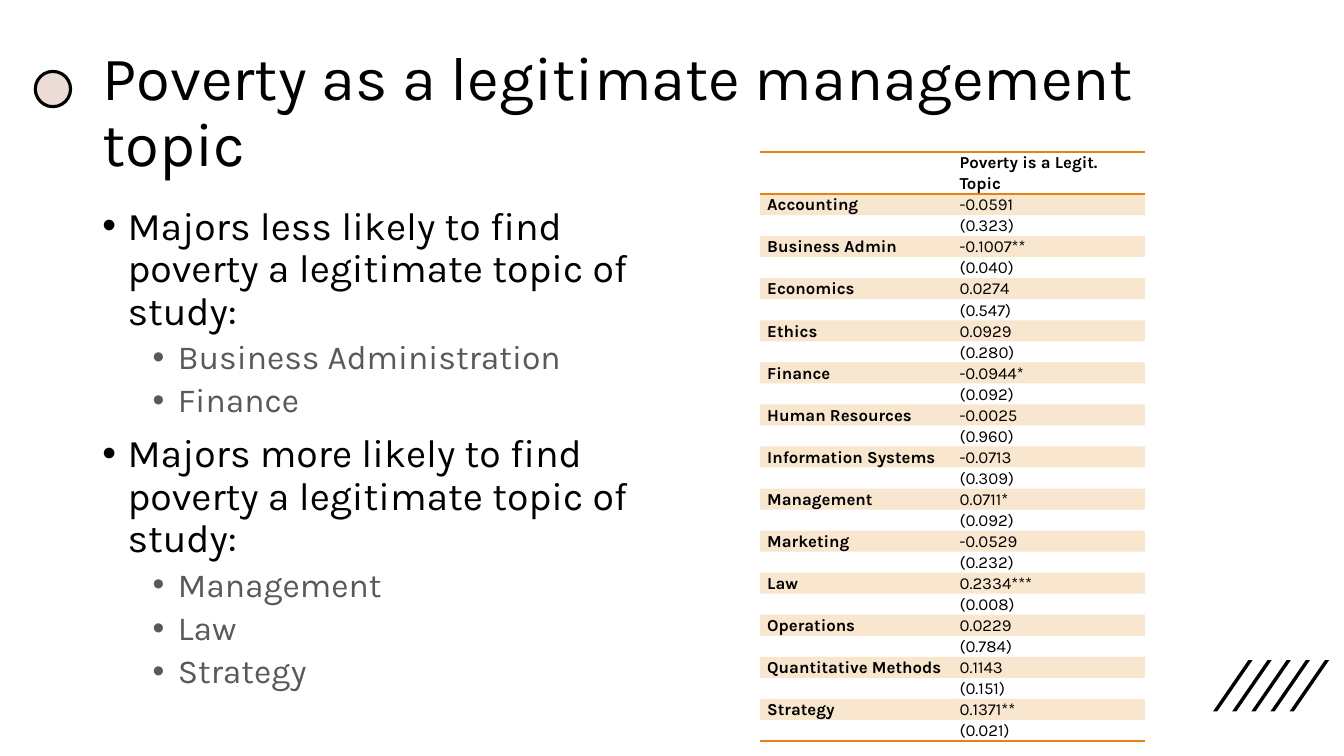
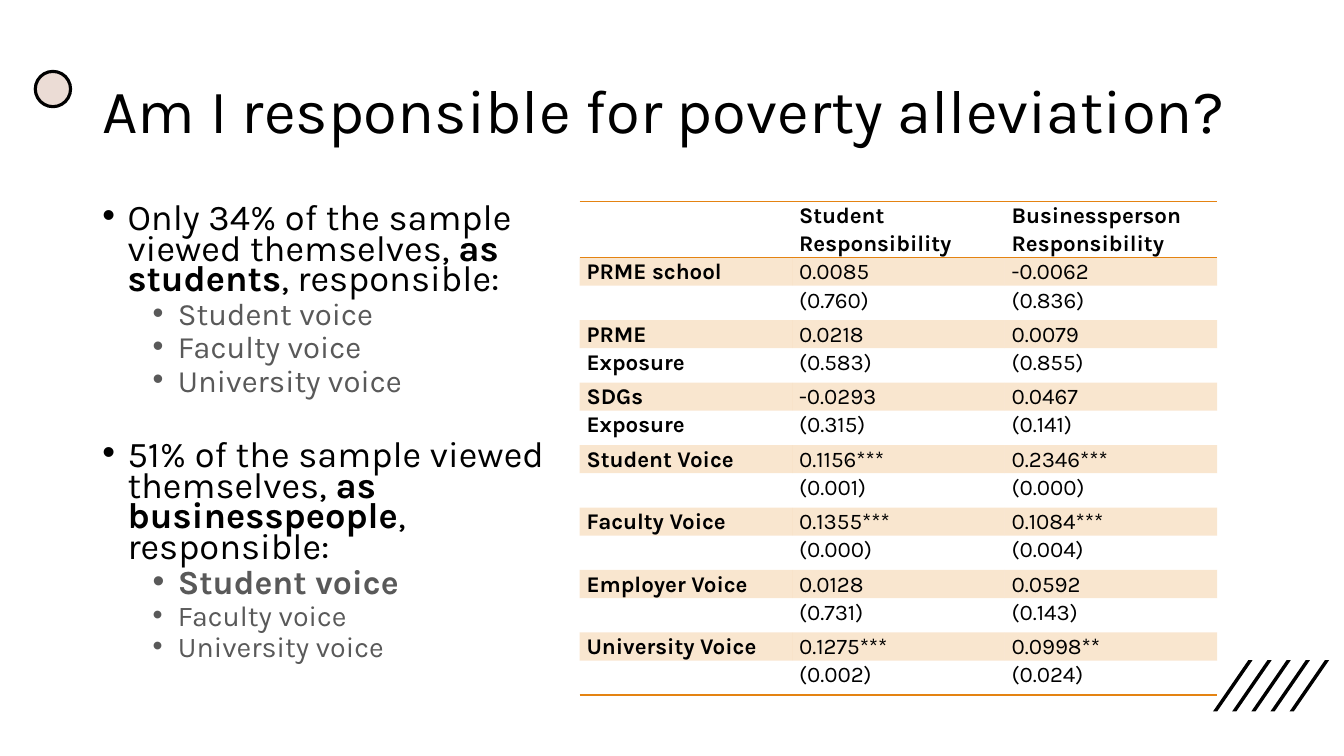
"""Build two slides on student attitudes to poverty, each with bullets and a regression table."""
from dataclasses import dataclass
from itertools import chain

from lxml.etree import SubElement
from pptx import Presentation
from pptx.dml.color import RGBColor
from pptx.enum.shapes import MSO_SHAPE
from pptx.enum.text import MSO_ANCHOR, MSO_AUTO_SIZE, PP_ALIGN
from pptx.oxml.ns import qn
from pptx.presentation import Presentation as PresentationType
from pptx.slide import Slide
from pptx.table import _Cell as Cell
from pptx.text.text import TextFrame, _Paragraph as Paragraph
from pptx.util import Emu, Inches, Pt

FONT = "Karla"
BLACK, GREY, ORANGE, BLUSH = "000000", "595959", "E48312", "EBDCD5"
SLIDE_WIDTH, SLIDE_HEIGHT = Emu(12192000), Emu(6858000)
GRID_COLUMNS = 160
TITLE_ONLY = 5
PLAIN_TABLE_STYLE = "{2D5ABB26-0587-4C30-8999-92F81FD0307C}"


@dataclass(frozen=True)
class Box:
    """A place on the grid of 160 columns by 90 rows."""
    left: float
    top: float
    width: float
    height: float

    def lengths(self) -> tuple[Emu, Emu, Emu, Emu]:
        """Return left, top, width and height as lengths."""
        return grid(self.left), grid(self.top), grid(self.width), grid(self.height)


@dataclass(frozen=True)
class Bullet:
    """One bullet, whose text has its bold part between asterisk pairs."""
    text: str
    size: float
    level: int = 0
    space_before: float = 10


@dataclass(frozen=True)
class Estimate:
    """A table variable with its coefficients and the p-values below them."""
    label: str
    coefficients: tuple[str, ...]
    p_values: tuple[str, ...]
    second_label: str = ""


@dataclass(frozen=True)
class TableStyle:
    """Place and measures of a table on the grid."""
    left: float
    top: float
    column_width: float
    header_height: float
    band_height: float
    plain_height: float
    text_size: float


@dataclass(frozen=True)
class Topic:
    """The content of one slide."""
    title: str
    bullet_box: Box
    bullets: tuple[Bullet, ...]
    line_spacing: float
    headings: tuple[str, ...]
    estimates: tuple[Estimate, ...]
    table_style: TableStyle


TITLE_BOX = Box(11, 4.8, 138, 17.4)
DOT_BOX = Box(4.2, 8.5, 4.2, 4.2)
STRIPE_BOX = Box(144.4, 78.6, 4.7, 6.1)
STRIPE_COUNT, STRIPE_STEP, STRIPE_THICKNESS = 5, 2.28, 0.5


def grid(cells: float) -> Emu:
    """Turn grid cells into a length."""
    return Emu(round(SLIDE_WIDTH * cells / GRID_COLUMNS))


def color(code: str) -> RGBColor:
    """Turn a hex string into a colour."""
    return RGBColor.from_string(code)


def add_text(paragraph: Paragraph, text: str, *, size: float, ink: str = BLACK, bold: bool = False) -> None:
    """Add a formatted run to a paragraph."""
    run = paragraph.add_run()
    run.text = text
    run.font.name = FONT
    run.font.size = Pt(size)
    run.font.bold = bold
    run.font.color.rgb = color(ink)


def add_stripes(slide: Slide) -> None:
    """Draw the slanted stripes in the lower right corner."""
    box = STRIPE_BOX
    bottom = box.top + box.height
    for index in range(STRIPE_COUNT):
        left = box.left + index * STRIPE_STEP
        right = left + box.width
        corners = [(left + STRIPE_THICKNESS, bottom), (left, bottom),
                   (right - STRIPE_THICKNESS, box.top), (right, box.top)]
        points = [(grid(x), grid(y)) for x, y in corners]
        builder = slide.shapes.build_freeform(*points[0])
        builder.add_line_segments(points[1:], close=True)
        stripe = builder.convert_to_shape()
        stripe.shadow.inherit = False
        stripe.fill.solid()
        stripe.fill.fore_color.rgb = color(BLACK)
        stripe.line.fill.background()


def add_dot(slide: Slide) -> None:
    """Draw the outlined dot beside the title."""
    dot = slide.shapes.add_shape(MSO_SHAPE.OVAL, *DOT_BOX.lengths())
    dot.shadow.inherit = False
    dot.fill.solid()
    dot.fill.fore_color.rgb = color(BLUSH)
    dot.line.color.rgb = color(BLACK)
    dot.line.width = Pt(2.25)


def prepare_frame(frame: TextFrame, anchor: MSO_ANCHOR) -> None:
    """Make a text frame wrap at a fixed size."""
    frame.word_wrap = True
    frame.auto_size = MSO_AUTO_SIZE.NONE
    frame.vertical_anchor = anchor


def set_title(slide: Slide, text: str) -> None:
    """Place and format the title placeholder."""
    title = slide.shapes.title
    title.left, title.top, title.width, title.height = TITLE_BOX.lengths()
    prepare_frame(title.text_frame, MSO_ANCHOR.MIDDLE)
    paragraph = title.text_frame.paragraphs[0]
    paragraph.alignment = PP_ALIGN.LEFT
    paragraph.line_spacing = 0.9
    add_text(paragraph, text, size=44)


def add_bullets(slide: Slide, topic: Topic) -> None:
    """Add the bulleted text on the left."""
    frame = slide.shapes.add_textbox(*topic.bullet_box.lengths()).text_frame
    prepare_frame(frame, MSO_ANCHOR.TOP)
    for index, bullet in enumerate(topic.bullets):
        paragraph = frame.add_paragraph() if index else frame.paragraphs[0]
        paragraph.level = bullet.level
        paragraph.line_spacing = topic.line_spacing
        paragraph.space_before = Pt(bullet.space_before)
        properties = paragraph._p.get_or_add_pPr()
        properties.set("marL", str(Inches(0.25 + 0.5 * bullet.level)))
        properties.set("indent", str(Inches(-0.25)))
        SubElement(properties, qn("a:buFont"), typeface="Arial")
        SubElement(properties, qn("a:buChar"), char="•")
        ink = GREY if bullet.level else BLACK
        for position, part in enumerate(bullet.text.split("**")):
            if part:
                add_text(paragraph, part, size=bullet.size, ink=ink, bold=position % 2 == 1)


def add_border(cell: Cell, side: str) -> None:
    """Draw an orange line on the top (T) or bottom (B) of a cell."""
    line = SubElement(cell._tc.get_or_add_tcPr(), qn(f"a:ln{side}"), w=str(Pt(1)))
    fill = SubElement(line, qn("a:solidFill"))
    SubElement(fill, qn("a:srgbClr"), val=ORANGE)


def fill_cell(cell: Cell, banded: bool) -> None:
    """Fill a cell with pale orange or leave it clear."""
    if not banded:
        cell.fill.background()
        return
    cell.fill.solid()
    cell.fill.fore_color.rgb = color(ORANGE)
    tint = cell._tc.tcPr.find(f".//{qn('a:srgbClr')}")
    tint_list = list(cell._tc.tcPr.iterfind(f"{qn('a:solidFill')}/{qn('a:srgbClr')}"))
    SubElement(tint_list[-1] if tint_list else tint, qn("a:alpha"), val="20000")


def write_cell(cell: Cell, text: str, size: float, bold: bool) -> None:
    """Write the text of a table cell."""
    cell.margin_left = cell.margin_right = Inches(0.07)
    cell.margin_top = cell.margin_bottom = 0
    paragraph = cell.text_frame.paragraphs[0]
    paragraph.line_spacing = 1.07
    if text:
        add_text(paragraph, text, size=size, bold=bold)
    else:
        SubElement(paragraph._p, qn("a:endParaRPr"), sz=str(round(size * 100)))


def add_estimates(slide: Slide, topic: Topic) -> None:
    """Add the table of estimates, with a band under each coefficient."""
    style = topic.table_style
    pairs = (((item.label, *item.coefficients), (item.second_label, *item.p_values))
             for item in topic.estimates)
    rows = [("", *topic.headings), *chain.from_iterable(pairs)]
    heights = [style.header_height] + [style.band_height, style.plain_height] * len(topic.estimates)
    box = Box(style.left, style.top, style.column_width * len(rows[0]), sum(heights))
    frame = slide.shapes.add_table(len(rows), len(rows[0]), *box.lengths())
    table = frame.table
    table.first_row = table.horz_banding = False
    table._tbl.tblPr.find(qn("a:tableStyleId")).text = PLAIN_TABLE_STYLE
    for column in table.columns:
        column.width = grid(style.column_width)
    for row_index, (texts, height) in enumerate(zip(rows, heights)):
        table.rows[row_index].height = grid(height)
        sides = "TB" if row_index == 0 else "B" if row_index == len(rows) - 1 else ""
        for column_index, text in enumerate(texts):
            cell = table.cell(row_index, column_index)
            write_cell(cell, text, style.text_size, row_index == 0 or column_index == 0)
            for side in sides:
                add_border(cell, side)
            fill_cell(cell, row_index % 2 == 1)


def add_topic(presentation: PresentationType, topic: Topic) -> None:
    """Add one complete slide."""
    slide = presentation.slides.add_slide(presentation.slide_layouts[TITLE_ONLY])
    add_stripes(slide)
    add_dot(slide)
    set_title(slide, topic.title)
    add_bullets(slide, topic)
    add_estimates(slide, topic)


LEGITIMACY = Topic(
    "Poverty as a legitimate management topic",
    Box(11, 24, 68, 57.1),
    (Bullet("Majors less likely to find poverty a legitimate topic of study:", 28),
     *(Bullet(major, 24, 1, 5) for major in ("Business Administration", "Finance")),
     Bullet("Majors more likely to find poverty a legitimate topic of study:", 28),
     *(Bullet(major, 24, 1, 5) for major in ("Management", "Law", "Strategy"))),
    0.9,
    ("Poverty is a Legit. Topic",),
    tuple(Estimate(major, (coefficient,), (p_value,)) for major, coefficient, p_value in (
        ("Accounting", "-0.0591", "(0.323)"),
        ("Business Admin", "-0.1007**", "(0.040)"),
        ("Economics", "0.0274", "(0.547)"),
        ("Ethics", "0.0929", "(0.280)"),
        ("Finance", "-0.0944*", "(0.092)"),
        ("Human Resources", "-0.0025", "(0.960)"),
        ("Information Systems", "-0.0713", "(0.309)"),
        ("Management", "0.0711*", "(0.092)"),
        ("Marketing", "-0.0529", "(0.232)"),
        ("Law", "0.2334***", "(0.008)"),
        ("Operations", "0.0229", "(0.784)"),
        ("Quantitative Methods", "0.1143", "(0.151)"),
        ("Strategy", "0.1371**", "(0.021)"))),
    TableStyle(90.5, 18.1, 22.9, 3.7, 1.8, 2.4, 12))

RESPONSIBILITY = Topic(
    "Am I responsible for poverty alleviation?",
    Box(11, 24, 58, 61.2),
    (Bullet("Only 34% of the sample viewed themselves, **as students**, responsible:", 25.9),
     *(Bullet(f"{voice} voice", 22.2, 1, 5) for voice in ("Student", "Faculty", "University")),
     Bullet("51% of the sample viewed themselves, **as businesspeople**, responsible:", 25.9, 0, 33),
     Bullet("**Student voice**", 24.1, 1, 5),
     *(Bullet(f"{voice} voice", 20.4, 1, 5) for voice in ("Faculty", "University"))),
    0.7,
    ("Student Responsibility", "Businessperson Responsibility"),
    (Estimate("PRME school", ("0.0085", "-0.0062"), ("(0.760)", "(0.836)")),
     Estimate("PRME", ("0.0218", "0.0079"), ("(0.583)", "(0.855)"), "Exposure"),
     Estimate("SDGs", ("-0.0293", "0.0467"), ("(0.315)", "(0.141)"), "Exposure"),
     Estimate("Student Voice", ("0.1156***", "0.2346***"), ("(0.001)", "(0.000)")),
     Estimate("Faculty Voice", ("0.1355***", "0.1084***"), ("(0.000)", "(0.004)")),
     Estimate("Employer Voice", ("0.0128", "0.0592"), ("(0.731)", "(0.143)")),
     Estimate("University Voice", ("0.1275***", "0.0998**"), ("(0.002)", "(0.024)"))),
    TableStyle(69, 24, 25.3, 6.5, 3.1, 4.1, 16))


def main() -> None:
    """Build and save the presentation."""
    presentation = Presentation()
    presentation.slide_width, presentation.slide_height = SLIDE_WIDTH, SLIDE_HEIGHT
    for topic in (LEGITIMACY, RESPONSIBILITY):
        add_topic(presentation, topic)
    presentation.save("out.pptx")


if __name__ == "__main__":
    main()
